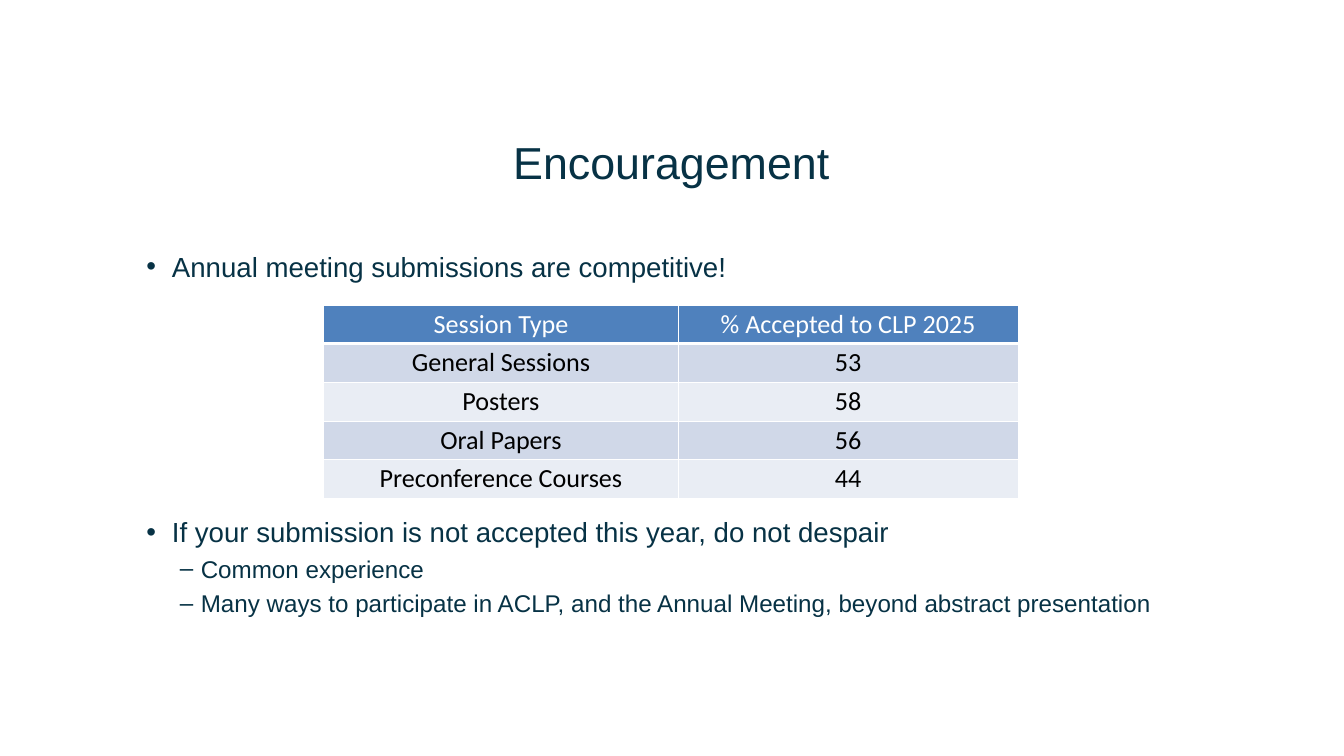
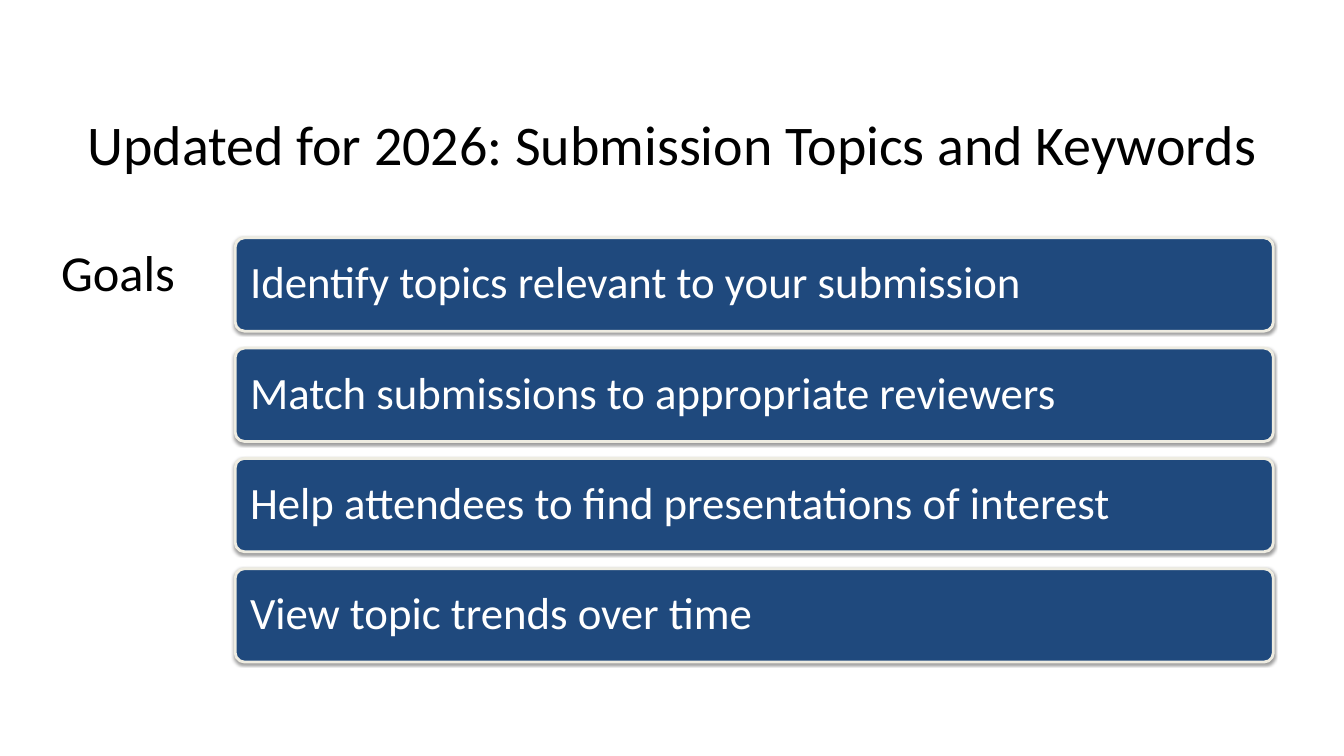
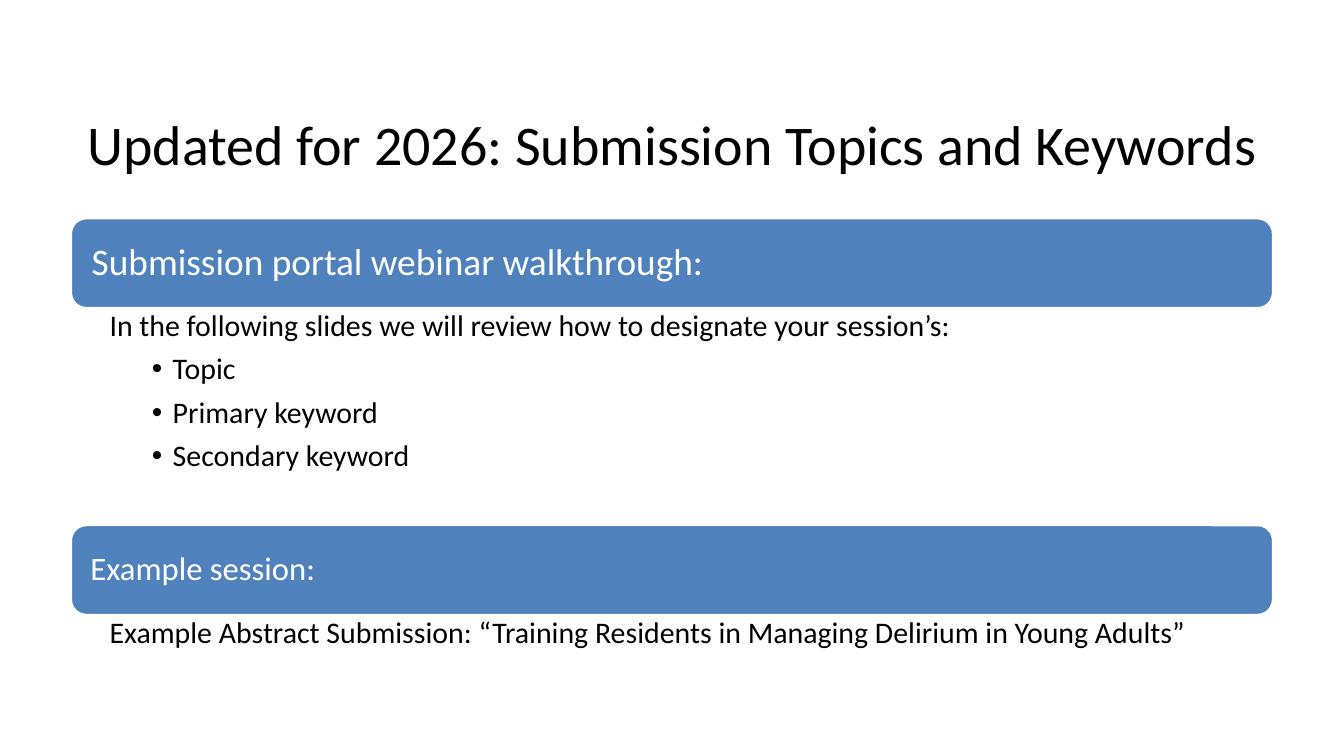
import dataclasses

import lxml.etree
import pptx
import pptx.dml.color
import pptx.enum.shapes
import pptx.enum.text
import pptx.oxml.ns
import pptx.util

Cm = pptx.util.Cm
Pt = pptx.util.Pt
qn = pptx.oxml.ns.qn
ALIGN = pptx.enum.text.PP_ALIGN
ANCHOR = pptx.enum.text.MSO_ANCHOR


@dataclasses.dataclass(frozen=True)
class Theme:
    heading_font: str = "Arial"
    text_font: str = "Calibri"
    navy: str = "073245"
    black: str = "000000"
    white: str = "FFFFFF"
    blue: str = "4F81BD"
    deep_blue: str = "1F497D"
    cream: str = "EEECE1"
    bands: tuple = ("D0D8E8", "E9EDF4")
    title_size: float = 60
    encouragement_size: float = 48
    goals_size: float = 54
    card_size: float = 48
    section_size: float = 40
    small_section_size: float = 35
    detail_size: float = 32
    bullet_size: float = 29.6
    sub_bullet_size: float = 25.9
    table_size: float = 28


def apply(target, formats):
    for name, value in formats.items():
        setattr(target, name, value)


def rgb(color):
    return pptx.dml.color.RGBColor.from_string(color)


def add_xml(parent, tag, **attributes):
    return lxml.etree.SubElement(parent, qn(tag), attributes)


class Deck:
    def __init__(self, theme):
        self.theme = theme
        self.presentation = pptx.Presentation()
        apply(self.presentation, {"slide_width": Cm(50.8), "slide_height": Cm(28.58)})
        self.slide = None

    def style(self, size, color, font=None):
        return {"size": size, "color": color, "name": font or self.theme.text_font}

    def add_line(self, paragraph, text, style, formats=None, bullet=None, margin=0, hang=0):
        properties = paragraph._p.get_or_add_pPr()
        if bullet:
            properties.set("marL", str(Cm(margin)))
            properties.set("indent", str(-Cm(hang)))
            add_xml(properties, "a:buFont", typeface="Arial")
            add_xml(properties, "a:buChar", char=bullet)
        apply(paragraph, formats or {})
        run = paragraph.add_run()
        run.text = text
        apply(run.font, {"name": style["name"], "size": Pt(style["size"]), "bold": False})
        run.font.color.rgb = rgb(style["color"])

    def fill_frame(self, frame, lines, anchor=ANCHOR.TOP, insets=(0.25, 0.13, 0.25, 0.13)):
        sides = ("margin_left", "margin_top", "margin_right", "margin_bottom")
        apply(frame, dict(zip(sides, map(Cm, insets))))
        apply(frame, {
            "word_wrap": True,
            "auto_size": pptx.enum.text.MSO_AUTO_SIZE.NONE,
            "vertical_anchor": anchor,
        })
        for index, line in enumerate(lines):
            paragraph = frame.add_paragraph() if index else frame.paragraphs[0]
            self.add_line(paragraph, **line)

    def add_slide(self, title, box, style, **formats):
        self.slide = self.presentation.slides.add_slide(self.presentation.slide_layouts[5])
        heading = self.slide.shapes.title
        apply(heading, dict(zip(("left", "top", "width", "height"), map(Cm, box))))
        line = {"text": title, "style": style, "formats": {"alignment": ALIGN.CENTER, **formats}}
        self.fill_frame(heading.text_frame, [line], ANCHOR.MIDDLE)

    def add_text(self, box, lines, **frame_options):
        text_box = self.slide.shapes.add_textbox(*map(Cm, box))
        self.fill_frame(text_box.text_frame, lines, **frame_options)

    def add_panel(self, box, text, style, fill, line, line_width, insets, radius=0.17, shadow=False):
        panel = self.slide.shapes.add_shape(
            pptx.enum.shapes.MSO_SHAPE.ROUNDED_RECTANGLE, *map(Cm, box))
        panel.adjustments[0] = radius
        panel.shadow.inherit = False
        panel.fill.solid()
        panel.fill.fore_color.rgb = rgb(fill)
        panel.line.color.rgb = rgb(line)
        panel.line.width = Pt(line_width)
        if shadow:
            effects = panel._element.spPr.find(qn("a:effectLst"))
            outer = add_xml(effects, "a:outerShdw", blurRad=str(Pt(3.1)), dist=str(Pt(1.6)),
                            dir="5400000", rotWithShape="0")
            shade = add_xml(outer, "a:srgbClr", val=self.theme.black)
            add_xml(shade, "a:alpha", val="38000")
        label = {"text": text, "style": style,
                 "formats": {"alignment": ALIGN.LEFT, "line_spacing": 0.9}}
        self.fill_frame(panel.text_frame, [label], ANCHOR.MIDDLE, insets)

    def add_borders(self, cell, bottom_width):
        properties = cell._tc.get_or_add_tcPr()
        widths = {"a:lnL": 1, "a:lnR": 1, "a:lnT": 1, "a:lnB": bottom_width}
        for tag, width in widths.items():
            border = add_xml(properties, tag, w=str(Pt(width)))
            add_xml(add_xml(border, "a:solidFill"), "a:srgbClr", val=self.theme.white)

    def add_table(self, left, top, column_widths, row_height, rows):
        theme = self.theme
        table = self.slide.shapes.add_table(
            len(rows), len(column_widths), Cm(left), Cm(top),
            Cm(sum(column_widths)), Cm(row_height * len(rows))).table
        table.horz_banding = False
        for column, width in zip(table.columns, column_widths):
            column.width = Cm(width)
        for row_index, values in enumerate(rows):
            table.rows[row_index].height = Cm(row_height)
            is_header = row_index == 0
            fill = theme.blue if is_header else theme.bands[(row_index - 1) % 2]
            style = self.style(theme.table_size, theme.white if is_header else theme.black)
            for column_index, value in enumerate(values):
                cell = table.cell(row_index, column_index)
                self.add_borders(cell, 3 if is_header else 1)
                cell.fill.solid()
                cell.fill.fore_color.rgb = rgb(fill)
                cell.vertical_anchor = ANCHOR.MIDDLE
                self.add_line(cell.text_frame.paragraphs[0], value, style,
                              {"alignment": ALIGN.CENTER})


def build_encouragement(deck):
    theme = deck.theme
    deck.add_slide("Encouragement", (1.98, 4.34, 46.79, 3.78),
                   deck.style(theme.encouragement_size, theme.navy, theme.heading_font),
                   line_spacing=0.9)

    def point(text):
        return {"text": text, "bullet": "•", "margin": 0.97, "hang": 0.97,
                "style": deck.style(theme.bullet_size, theme.navy, theme.heading_font)}

    def sub_point(text):
        return {"text": text, "bullet": "–", "margin": 2.06, "hang": 0.79,
                "formats": {"space_before": Pt(6)},
                "style": deck.style(theme.sub_bullet_size, theme.navy, theme.heading_font)}

    deck.add_text((5.28, 9.3, 40.21, 1.5), [point("Annual meeting submissions are competitive!")])
    deck.add_table(12.24, 11.53, (13.39, 12.85), 1.46, [
        ("Session Type", "% Accepted to CLP 2025"),
        ("General Sessions", "53"),
        ("Posters", "58"),
        ("Oral Papers", "56"),
        ("Preconference Courses", "44"),
    ])
    deck.add_text((5.28, 19.35, 40.21, 4.88), [
        point("If your submission is not accepted this year, do not despair"),
        sub_point("Common experience"),
        sub_point("Many ways to participate in ACLP, and the Annual Meeting, "
                  "beyond abstract presentation"),
    ])


def add_topics_slide(deck):
    deck.add_slide("Updated for 2026: Submission Topics and Keywords",
                   (2.01, 3.99, 46.79, 2.84),
                   deck.style(deck.theme.title_size, deck.theme.black))


def build_goals(deck):
    theme = deck.theme
    first_top, pitch = 8.99, 4.17
    goals = (
        "Identify topics relevant to your submission",
        "Match submissions to appropriate reviewers",
        "Help attendees to find presentations of interest",
        "View topic trends over time",
    )
    add_topics_slide(deck)
    for index, goal in enumerate(goals):
        deck.add_panel((8.89, first_top + index * pitch, 39.24, 3.53), goal,
                       deck.style(theme.card_size, theme.white), theme.deep_blue,
                       theme.cream, 3, (0.46, 0.46, 0, 0.46), radius=0.1, shadow=True)
    deck.add_text((2.06, first_top, 5.38, 2.72), [
        {"text": "Goals", "style": deck.style(theme.goals_size, theme.black)}])


def build_walkthrough(deck):
    theme = deck.theme
    left, width, header_height = 2.69, 45.42, 3.38
    detail_style = deck.style(theme.detail_size, theme.black)
    sections = (
        (8.26, "Submission portal webinar walkthrough:", theme.section_size, 0.61, 8.23,
         "In the following slides we will review how to designate your session’s:",
         ("Topic", "Primary keyword", "Secondary keyword")),
        (19.86, "Example session:", theme.small_section_size, 0.56, 3,
         "Example Abstract Submission: “Training Residents in Managing Delirium in Young Adults”",
         ()),
    )
    add_topics_slide(deck)
    for top, header, size, inset, detail_height, intro, items in sections:
        deck.add_panel((left, top, width, header_height), header,
                       deck.style(size, theme.white), theme.blue, theme.white, 2, (inset,) * 4)
        spacing = {"line_spacing": 0.9, "space_after": Pt(6)}
        details = [{"text": intro, "style": detail_style, "formats": spacing}]
        details += [{"text": item, "style": detail_style, "bullet": "•",
                     "margin": 2.39, "hang": 0.79,
                     "formats": {**spacing, "space_before": Pt(6)}} for item in items]
        deck.add_text((left, top + header_height, width, detail_height), details,
                      insets=(1.45, 0.1, 0.64, 0.1))


def main():
    deck = Deck(Theme())
    build_encouragement(deck)
    build_goals(deck)
    build_walkthrough(deck)
    deck.presentation.save("out.pptx")


if __name__ == "__main__":
    main()
